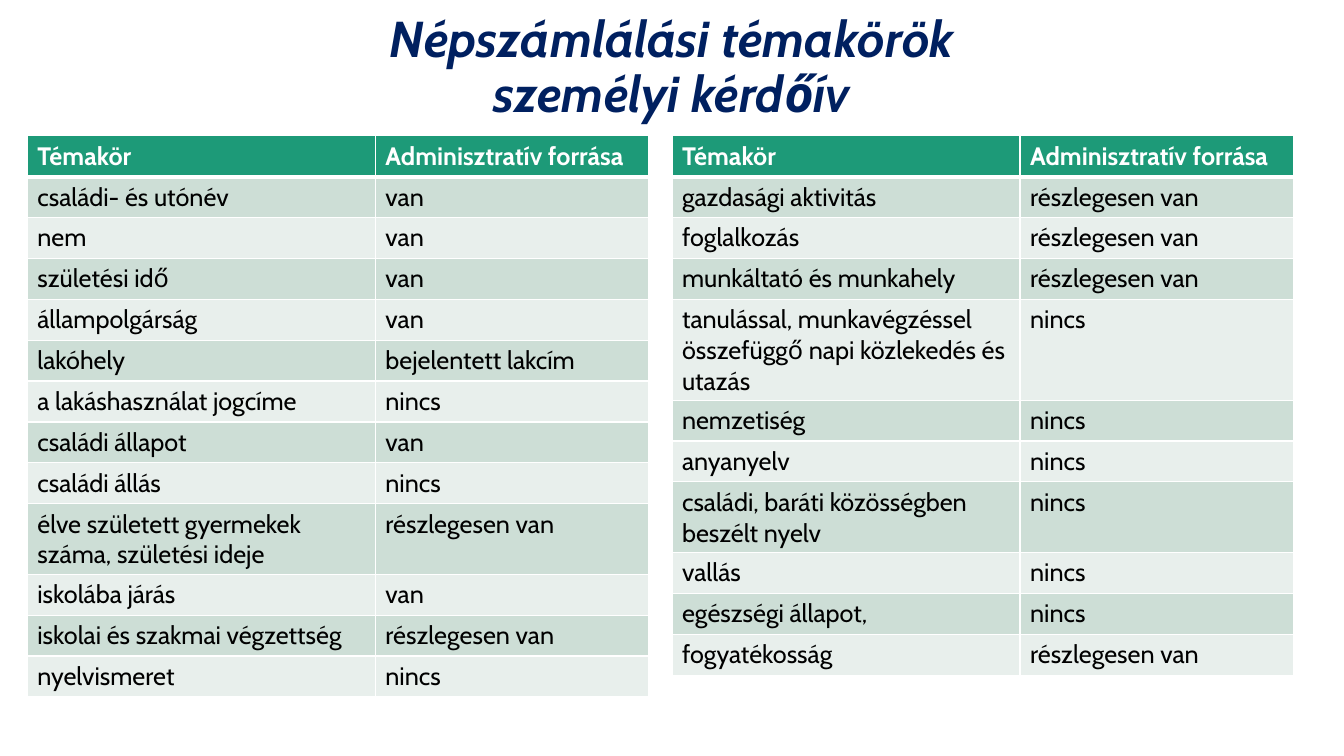
import lxml.etree
import pptx
import pptx.dml.color
import pptx.enum.text
import pptx.oxml.ns
import pptx.util

NAVY = pptx.dml.color.RGBColor(0x00, 0x20, 0x60)
GREEN = pptx.dml.color.RGBColor(0x1D, 0x9A, 0x78)
DARK_BAND = pptx.dml.color.RGBColor(0xCD, 0xDE, 0xD6)
LIGHT_BAND = pptx.dml.color.RGBColor(0xE8, 0xEF, 0xEC)
WHITE = pptx.dml.color.RGBColor(0xFF, 0xFF, 0xFF)
BLACK = pptx.dml.color.RGBColor(0x00, 0x00, 0x00)

FONT = "Cabin"
ROW_HEIGHT = 29.2
TOPIC_SHARE = 0.56
THIN, THICK = 1, 3

HEADER = ("Témakör", "Adminisztratív forrása")
PERSONAL_TOPICS = [
    ("családi- és utónév", "van"),
    ("nem", "van"),
    ("születési idő", "van"),
    ("állampolgárság", "van"),
    ("lakóhely", "bejelentett lakcím"),
    ("a lakáshasználat jogcíme", "nincs"),
    ("családi állapot", "van"),
    ("családi állás", "nincs"),
    ("élve született gyermekek száma, születési ideje", "részlegesen van"),
    ("iskolába járás", "van"),
    ("iskolai és szakmai végzettség", "részlegesen van"),
    ("nyelvismeret", "nincs"),
]
SOCIAL_TOPICS = [
    ("gazdasági aktivitás", "részlegesen van"),
    ("foglalkozás", "részlegesen van"),
    ("munkáltató és munkahely", "részlegesen van"),
    ("tanulással, munkavégzéssel összefüggő napi közlekedés és utazás", "nincs"),
    ("nemzetiség", "nincs"),
    ("anyanyelv", "nincs"),
    ("családi, baráti közösségben beszélt nyelv", "nincs"),
    ("vallás", "nincs"),
    ("egészségi állapot,", "nincs"),
    ("fogyatékosság", "részlegesen van"),
]


def set_font(paragraph, size, color, bold, italic=False):
    """Set the typeface, size, colour and style of a paragraph."""
    font = paragraph.font
    font.name = FONT
    font.size = pptx.util.Pt(size)
    font.color.rgb = color
    font.bold = bold
    font.italic = italic


def set_borders(cell, top, bottom):
    """Draw white borders around a cell, with the given top and bottom widths."""
    properties = cell._tc.get_or_add_tcPr()
    widths = {"a:lnL": THIN, "a:lnR": THIN, "a:lnT": top, "a:lnB": bottom}
    for tag, width in widths.items():
        line = lxml.etree.SubElement(properties, pptx.oxml.ns.qn(tag), w=str(pptx.util.Pt(width)))
        fill = lxml.etree.SubElement(line, pptx.oxml.ns.qn("a:solidFill"))
        lxml.etree.SubElement(fill, pptx.oxml.ns.qn("a:srgbClr"), val=str(WHITE))


def add_title(slide, lines, left, top, width, height):
    """Add the centred title, one line below the other."""
    shape = slide.shapes.add_textbox(*map(pptx.util.Pt, (left, top, width, height)))
    frame = shape.text_frame
    frame.word_wrap = True
    frame.vertical_anchor = pptx.enum.text.MSO_ANCHOR.MIDDLE
    paragraph = frame.paragraphs[0]
    paragraph.alignment = pptx.enum.text.PP_ALIGN.CENTER
    paragraph.line_spacing = 0.9
    for index, line in enumerate(lines):
        if index:
            paragraph.add_line_break()
        paragraph.add_run().text = line
    set_font(paragraph, 36, NAVY, bold=True, italic=True)


def add_topic_table(slide, topics, left, top, width):
    """Add a banded table of census topics and their administrative sources."""
    rows = [HEADER, *topics]
    box = (left, top, width, ROW_HEIGHT * len(rows))
    table = slide.shapes.add_table(len(rows), len(HEADER), *map(pptx.util.Pt, box)).table
    for column, share in zip(table.columns, (TOPIC_SHARE, 1 - TOPIC_SHARE)):
        column.width = pptx.util.Pt(width * share)
    for row_index, row in enumerate(rows):
        is_header = row_index == 0
        band = DARK_BAND if row_index % 2 else LIGHT_BAND
        for column_index, text in enumerate(row):
            cell = table.cell(row_index, column_index)
            set_borders(cell, THICK if row_index == 1 else THIN, THICK if is_header else THIN)
            cell.fill.solid()
            cell.fill.fore_color.rgb = GREEN if is_header else band
            cell.text = text
            set_font(cell.text_frame.paragraphs[0], 18, WHITE if is_header else BLACK, bold=is_header)


def main():
    """Build the census topics slide and save it."""
    presentation = pptx.Presentation()
    presentation.slide_width = pptx.util.Pt(960)
    presentation.slide_height = pptx.util.Pt(540)
    slide = presentation.slides.add_slide(presentation.slide_layouts[6])
    add_title(slide, ("Népszámlálási témakörök", "személyi kérdőív"), 66, 6.5, 828, 85.5)
    for topics, left in ((PERSONAL_TOPICS, 19.5), (SOCIAL_TOPICS, 480)):
        add_topic_table(slide, topics, left, 97, 444)
    presentation.save("out.pptx")


if __name__ == "__main__":
    main()
